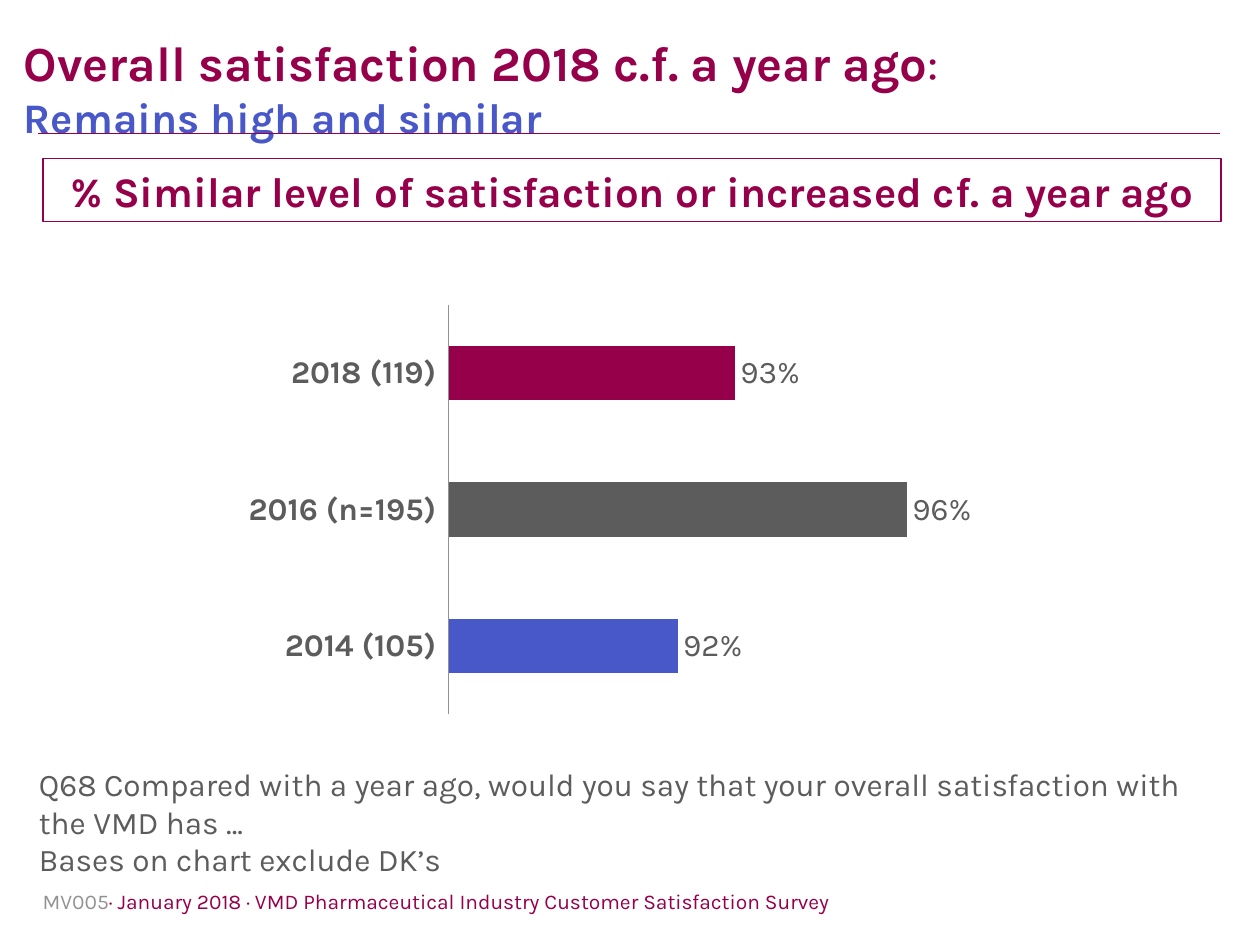
from lxml import etree
from pptx import Presentation
from pptx.chart.data import CategoryChartData
from pptx.dml.color import RGBColor
from pptx.enum.chart import XL_CHART_TYPE, XL_LABEL_POSITION, XL_TICK_LABEL_POSITION, XL_TICK_MARK
from pptx.enum.shapes import MSO_CONNECTOR, MSO_SHAPE
from pptx.enum.text import MSO_ANCHOR, MSO_AUTO_SIZE, PP_ALIGN
from pptx.oxml import parse_xml
from pptx.oxml.ns import nsdecls, qn
from pptx.util import Inches, Pt

PLUM = RGBColor(0x96, 0x00, 0x4B)
BLUE = RGBColor(0x49, 0x58, 0xC9)
GREY = RGBColor(0x5C, 0x5C, 0x5C)
LIGHT_GREY = RGBColor(0x92, 0x92, 0x92)
FONT = "Karla"


class SlideBuilder:
    """Holds the house style and the current slide."""

    def __init__(self, prs):
        self.s = prs.slides.add_slide(prs.slide_layouts[5])

    def style(self, font, size, color, bold=False):
        for name, value in {"name": FONT, "size": Pt(size), "bold": bold}.items():
            setattr(font, name, value)
        font.color.rgb = color

    def fill_text(self, tf, paragraphs, align=PP_ALIGN.LEFT, anchor=MSO_ANCHOR.TOP):
        """Each paragraph is a list of (text, size, color, bold) runs."""
        frame = {"word_wrap": True, "auto_size": MSO_AUTO_SIZE.NONE, "vertical_anchor": anchor}
        for name, value in frame.items():
            setattr(tf, name, value)
        for i, runs in enumerate(paragraphs):
            p = tf.paragraphs[0] if i == 0 else tf.add_paragraph()
            p.alignment = align
            for text, *look in runs:
                r = p.add_run()
                r.text = text
                self.style(r.font, *look)

    def title(self, box, paragraphs):
        sp = self.s.shapes.title
        sp.left, sp.top, sp.width, sp.height = map(Inches, box)
        sp.text_frame.margin_top = Inches(0.09)
        self.fill_text(sp.text_frame, paragraphs)

    def text(self, box, paragraphs):
        sp = self.s.shapes.add_textbox(*map(Inches, box))
        self.fill_text(sp.text_frame, paragraphs)

    def framed_text(self, box, paragraphs):
        sp = self.s.shapes.add_shape(MSO_SHAPE.RECTANGLE, *map(Inches, box))
        sp.shadow.inherit = False
        sp.fill.background()
        sp.line.color.rgb = PLUM
        sp.line.width = Pt(0.75)
        self.fill_text(sp.text_frame, paragraphs, PP_ALIGN.CENTER, MSO_ANCHOR.MIDDLE)

    def rule(self, x1, x2, y):
        line = self.s.shapes.add_connector(
            MSO_CONNECTOR.STRAIGHT, Inches(x1), Inches(y), Inches(x2), Inches(y))
        line.line.color.rgb = PLUM
        line.line.width = Pt(1)
        etree.SubElement(line._element.spPr, qn("a:effectLst"))

    def bar_chart(self, box, bars, plot_area):
        """Bars are (category, value, color), listed from the bottom up."""
        data = CategoryChartData(number_format="0%")
        data.categories = [name for name, _, _ in bars]
        data.add_series("Series 1", [value for _, value, _ in bars])
        chart = self.s.shapes.add_chart(
            XL_CHART_TYPE.BAR_CLUSTERED, *map(Inches, box), data).chart
        chart.has_title = chart.has_legend = False
        self.style(chart.font, 18, GREY)

        # Axes
        cat, val = chart.category_axis, chart.value_axis
        cat.major_tick_mark = XL_TICK_MARK.NONE
        cat.tick_label_position = XL_TICK_LABEL_POSITION.LOW
        cat.format.line.color.rgb = LIGHT_GREY
        self.style(cat.tick_labels.font, 18, GREY, True)
        limits = {"minimum_scale": 0.88, "maximum_scale": 1,
                  "has_major_gridlines": False, "visible": False}
        for name, value in limits.items():
            setattr(val, name, value)

        # Bars and their labels
        plot = chart.plots[0]
        plot.gap_width = 150
        plot.vary_by_categories = False
        series = plot.series[0]
        for i, (_, _, color) in enumerate(bars):
            fill = series.points[i].format.fill
            fill.solid()
            fill.fore_color.rgb = color
        labels = series.data_labels
        label_format = {"show_value": True, "number_format": "0%",
                        "number_format_is_linked": False,
                        "position": XL_LABEL_POSITION.OUTSIDE_END}
        for name, value in label_format.items():
            setattr(labels, name, value)
        self.style(labels.font, 18, GREY)

        # Fixed inner plot area
        edges = "".join(f'<c:{tag} val="{value}"/>' for tag, value in zip("xywh", plot_area))
        area = chart._chartSpace.chart.plotArea
        for old in area.findall(qn("c:layout")):
            area.remove(old)
        area.insert(0, parse_xml(
            f'<c:layout {nsdecls("c")}><c:manualLayout><c:layoutTarget val="inner"/>'
            f'<c:xMode val="edge"/><c:yMode val="edge"/>{edges}</c:manualLayout></c:layout>'))


def main():
    prs = Presentation()
    prs.slide_width, prs.slide_height = Inches(10), Inches(7.5)
    b = SlideBuilder(prs)

    # Rule and footer
    b.rule(0.3, 9.68, 1.06)
    b.text((0.24, 7, 7.37, 0.3), [[
        ("MV005", 12, LIGHT_GREY),
        ("· January 2018 · VMD Pharmaceutical Industry Customer Satisfaction Survey", 12, PLUM)]])

    # Chart
    b.bar_chart((0.34, 2.21, 8.95, 4.17),
                [("2014 (105)", 0.92, BLUE), ("2016 (n=195)", 0.96, GREY),
                 ("2018 (119)", 0.93, PLUM)],
                (0.36, 0.05, 0.61, 0.78))

    # Title and chart heading
    b.title((0.09, 0.17, 8.5, 0.77), [
        [("Overall satisfaction 2018 c.f. a year ago", 28, PLUM, True), (":", 28, PLUM)],
        [("Remains high and similar", 24, BLUE, True)]])
    b.framed_text((0.34, 1.26, 9.35, 0.5), [
        [("% Similar level of satisfaction or increased cf. a year ago", 24, PLUM, True)]])

    # Question wording and base note
    b.text((0.21, 6.02, 9.48, 1.01), [
        [("Q68 Compared with a year ago, would you say that your overall satisfaction "
          "with the VMD has ...", 18, GREY)],
        [("Bases on chart exclude DK’s", 18, GREY)]])

    prs.save("out.pptx")


if __name__ == "__main__":
    main()
